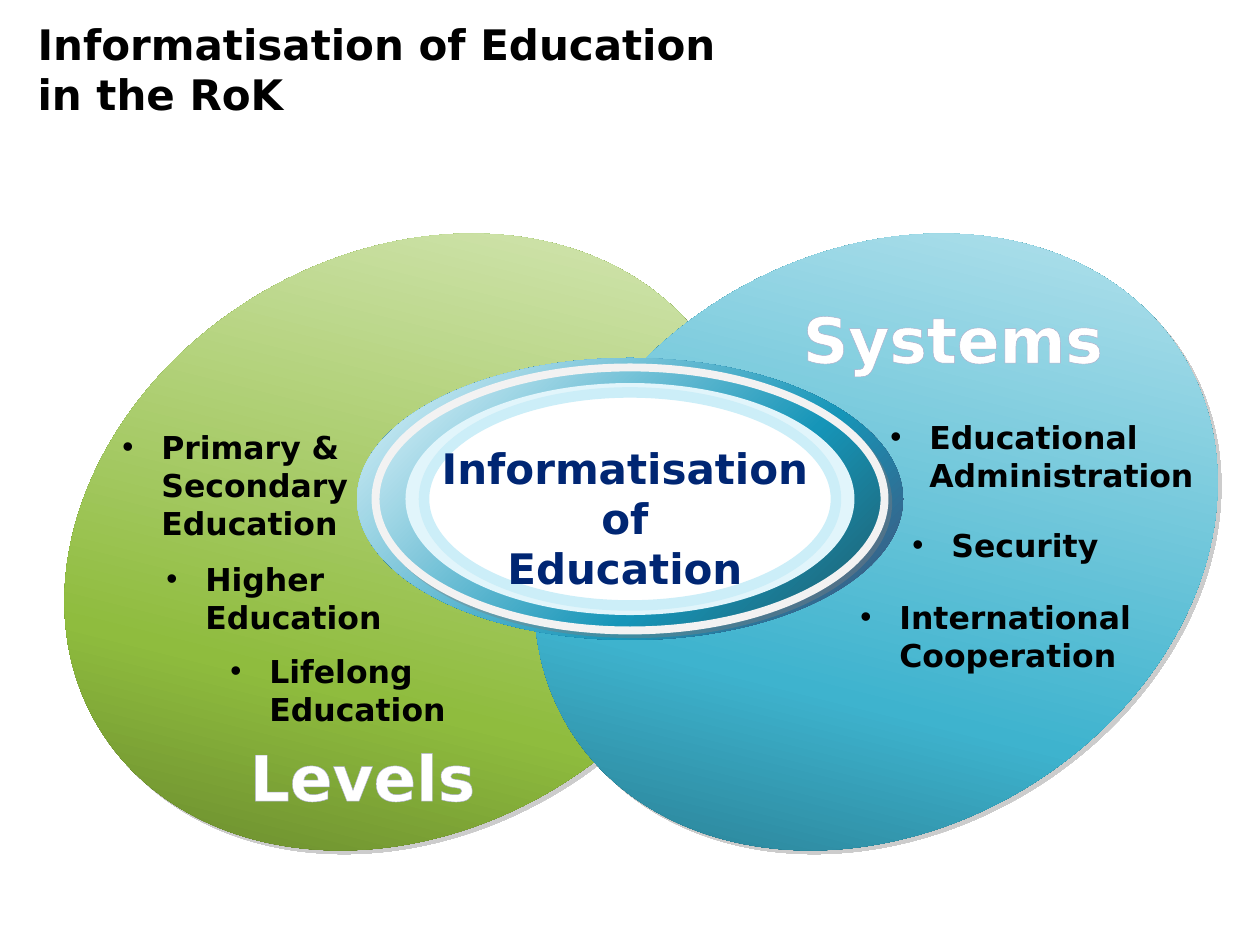
from pptx import Presentation
from pptx.dml.color import RGBColor
from pptx.enum.shapes import MSO_SHAPE
from pptx.enum.text import MSO_ANCHOR, MSO_AUTO_SIZE, PP_ALIGN
from pptx.oxml.ns import qn
from pptx.util import Pt
from lxml.etree import SubElement

OVAL = MSO_SHAPE.OVAL
LEFT, CENTER = PP_ALIGN.LEFT, PP_ALIGN.CENTER
MIDDLE = MSO_ANCHOR.MIDDLE
GROW, FIXED = MSO_AUTO_SIZE.SHAPE_TO_FIT_TEXT, MSO_AUTO_SIZE.NONE
SCALE = 914400 / 126
HEX = {
    "black": "000000", "white": "FFFFFF", "navy": "002673",
    "edge": "AAADCA", "shade": "808080", "rim": "F2F2F2",
    "pale": "E1F5FB", "ice": "CCEEF8",
}
GREEN = ("4F6822", "8FBC3E", "E6F1D3")
BLUE = ("1B5C6B", "3EB3CE", "D4EEF4")
OUTER = ("474B73", "1695B8", "E1F5FB")
INNER = ("215968", "1695B8", "E1F5FB")
STOPS = (0, 35, 100)
BODY = {"name": "DejaVu Sans", "size": Pt(18), "bold": True}
HEAD = {**BODY, "size": Pt(24)}
LABEL = {**BODY, "size": Pt(36)}


def px(n):
    return round(n * SCALE)


def color(name):
    return RGBColor.from_string(HEX[name])


def style(font, form, tint):
    for key, value in form.items():
        setattr(font, key, value)
    font.color.rgb = color(tint)


def blend(shape, tints):
    shape.fill.gradient()
    shape.fill.gradient_angle = 135
    stops = shape.fill._fill._gradFill.find(qn("a:gsLst"))
    stops.clear()
    for pos, tint in zip(STOPS, tints):
        stop = SubElement(stops, qn("a:gs"), pos=str(pos * 1000))
        SubElement(stop, qn("a:srgbClr"), val=tint)


def shade(shape):
    effects = shape._element.spPr.find(qn("a:effectLst"))
    cast = SubElement(effects, qn("a:outerShdw"), blurRad="0", dist=str(Pt(3)),
                      dir="2700000", algn="tl", rotWithShape="0")
    tint = SubElement(cast, qn("a:srgbClr"), val=HEX["shade"])
    SubElement(tint, qn("a:alpha"), val="40000")


def oval(slide, mid, size, fill, line=None, turn=0, cast=False):
    (x, y), (w, h) = mid, size
    shape = slide.shapes.add_shape(OVAL, px(x - w / 2), px(y - h / 2), px(w), px(h))
    shape.rotation = turn
    shape.shadow.inherit = False
    if isinstance(fill, tuple):
        blend(shape, fill)
    else:
        shape.fill.solid()
        shape.fill.fore_color.rgb = color(fill)
    if line:
        shape.line.color.rgb = color(line[0])
        shape.line.width = Pt(line[1])
    else:
        shape.line.fill.background()
    if cast:
        shade(shape)


def box(slide, at, lines, form, tint, wrap=True, align=CENTER):
    frame = slide.shapes.add_textbox(*map(px, at)).text_frame
    frame.word_wrap = wrap
    frame.auto_size = GROW
    frame.text = "\n".join(lines)
    for para in frame.paragraphs:
        para.alignment = align
        style(para.runs[0].font, form, tint)
    return frame.paragraphs[0]


def bullet(slide, at, text):
    para = box(slide, at, [text], BODY, "black", align=LEFT)
    props = para._p.get_or_add_pPr()
    props.set("marL", str(px(39)))
    props.set("indent", str(px(-39)))
    SubElement(props, qn("a:buFont"), typeface="Arial")
    SubElement(props, qn("a:buChar"), char="•")


def label(slide, at, text):
    run = box(slide, at, [text], LABEL, "white", wrap=False).runs[0]
    props = run._r.get_or_add_rPr()
    line = SubElement(props, qn("a:ln"), w=str(Pt(0.8)))
    fill = SubElement(line, qn("a:solidFill"))
    SubElement(fill, qn("a:srgbClr"), val=HEX["edge"])
    props.insert(0, line)


def title(slide, at, text):
    shape = slide.shapes.title
    for key, value in zip(("left", "top", "width", "height"), at):
        setattr(shape, key, px(value))
    frame = shape.text_frame
    frame.text = text
    frame.word_wrap = True
    frame.auto_size = FIXED
    frame.vertical_anchor = MIDDLE
    para = frame.paragraphs[0]
    para.alignment = LEFT
    for run in para.runs:
        style(run.font, HEAD, "black")


def main():
    deck = Presentation()
    deck.slide_width, deck.slide_height = px(1260), px(945)
    slide = deck.slides.add_slide(deck.slide_layouts[5])
    title(slide, (25, 21, 1099, 96), "Informatisation of Education\vin the RoK")

    for x, tints in ((406, GREEN), (876, BLUE)):
        oval(slide, (x, 542), (576, 718), tints, turn=59, cast=True)

    rings = (
        ((546, 282), OUTER, None, False),
        ((509, 263), INNER, ("rim", 4.5), True),
        ((449, 232), "pale", None, False),
        ((412, 213), "white", ("ice", 6), False),
    )
    for size, fill, line, cast in rings:
        oval(slide, (630, 499), size, fill, line, cast=cast)
    box(slide, (380, 436, 490, 165), ["Informatisation", "of", "Education"], HEAD, "navy")

    points = (
        ((110, 422, 253, 127), "Primary & Secondary Education"),
        ((154, 554, 253, 89), "Higher Education"),
        ((218, 646, 253, 89), "Lifelong Education"),
        ((878, 412, 339, 89), "Educational Administration"),
        ((900, 520, 253, 50), "Security"),
        ((848, 592, 326, 89), "International Cooperation"),
    )
    for at, text in points:
        bullet(slide, at, text)
    label(slide, (237, 732, 251, 89), "Levels")
    label(slide, (790, 294, 326, 89), "Systems")
    deck.save("out.pptx")


if __name__ == "__main__":
    main()
